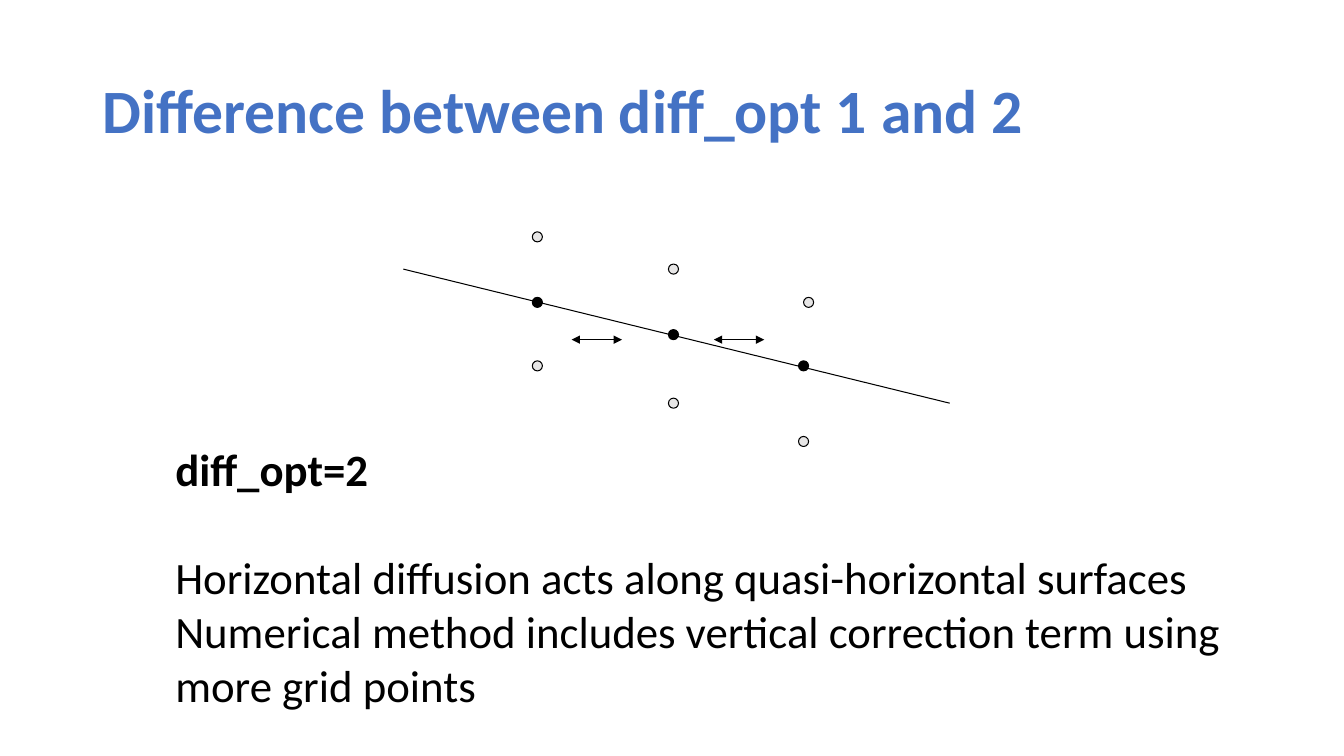
from lxml import etree
from pptx import Presentation
from pptx.dml.color import RGBColor
from pptx.enum import shapes, text
from pptx.oxml import ns
from pptx.util import Inches, Pt

BLUE, BLACK, GREY = "4472C4", "000000", "E7E6E6"
DOT_SIZE = 0.1


def colour(value):
    return RGBColor.from_string(value)


class DiagramPage:
    font = "Calibri"
    line_width = Pt(0.75)

    def __init__(self, deck):
        self.page = deck.slides.add_slide(deck.slide_layouts[5])

    def style_text(self, para, size, value, bold):
        para.alignment = text.PP_ALIGN.LEFT
        for span in para.runs:
            span.font.name = self.font
            span.font.size = Pt(size)
            span.font.bold = bold
            span.font.color.rgb = colour(value)

    def title(self, wording, left, top, width, height):
        box = self.page.shapes.title
        box.left, box.top = Inches(left), Inches(top)
        box.width, box.height = Inches(width), Inches(height)
        frame = box.text_frame
        frame.text = wording
        frame.auto_size = text.MSO_AUTO_SIZE.NONE
        frame.vertical_anchor = text.MSO_ANCHOR.MIDDLE
        para = frame.paragraphs[0]
        para.line_spacing = 0.9
        self.style_text(para, 44, BLUE, True)

    def explanation(self, heading, sentences, left, top, width, height):
        box = self.page.shapes.add_textbox(
            Inches(left), Inches(top), Inches(width), Inches(height))
        frame = box.text_frame
        frame.word_wrap = True
        frame.text = "\n".join([heading, *sentences])
        for number, para in enumerate(frame.paragraphs):
            self.style_text(para, 32, BLACK, number == 0)
        frame.paragraphs[1].space_before = Pt(39)

    def line(self, start, end, arrows=False):
        connector = self.page.shapes.add_connector(
            shapes.MSO_CONNECTOR.STRAIGHT,
            *(Inches(length) for length in (*start, *end)))
        connector.line.color.rgb = colour(BLACK)
        connector.line.width = self.line_width
        if arrows:
            outline = connector.line._get_or_add_ln()
            for end_name in ("a:headEnd", "a:tailEnd"):
                etree.SubElement(outline, ns.qn(end_name), type="triangle")
        etree.SubElement(connector._element.spPr, ns.qn("a:effectLst"))

    def dot(self, left, top, fill):
        dot = self.page.shapes.add_shape(
            shapes.MSO_SHAPE.OVAL, Inches(left), Inches(top),
            Inches(DOT_SIZE), Inches(DOT_SIZE))
        dot.shadow.inherit = False
        dot.fill.solid()
        dot.fill.fore_color.rgb = colour(fill)
        dot.line.color.rgb = colour(BLACK)
        dot.line.width = self.line_width


def main():
    deck = Presentation()
    deck.slide_width, deck.slide_height = Inches(13.33), Inches(7.5)
    diagram = DiagramPage(deck)
    diagram.title("Difference between diff_opt 1 and 2", 0.92, 0.4, 11.5, 1.45)

    diagram.line((4, 2.67), (9.42, 4))
    for left, top in ((5.28, 2.95), (6.63, 3.27), (7.92, 3.58)):
        diagram.dot(left, top, BLACK)
    for left in (5.67, 7.08):
        diagram.line((left, 3.37), (left + 0.5, 3.37), arrows=True)

    diagram.explanation(
        "diff_opt=2",
        ["Horizontal diffusion acts along quasi-horizontal surfaces",
         "Numerical method includes vertical correction term using "
         "more grid points"],
        1.64, 4.33, 10.78, 2.79)

    neighbours = ((5.28, 2.3), (5.28, 3.58), (6.63, 2.62),
                  (6.63, 3.95), (7.97, 2.95), (7.92, 4.33))
    for left, top in neighbours:
        diagram.dot(left, top, GREY)

    deck.save("out.pptx")


if __name__ == "__main__":
    main()
